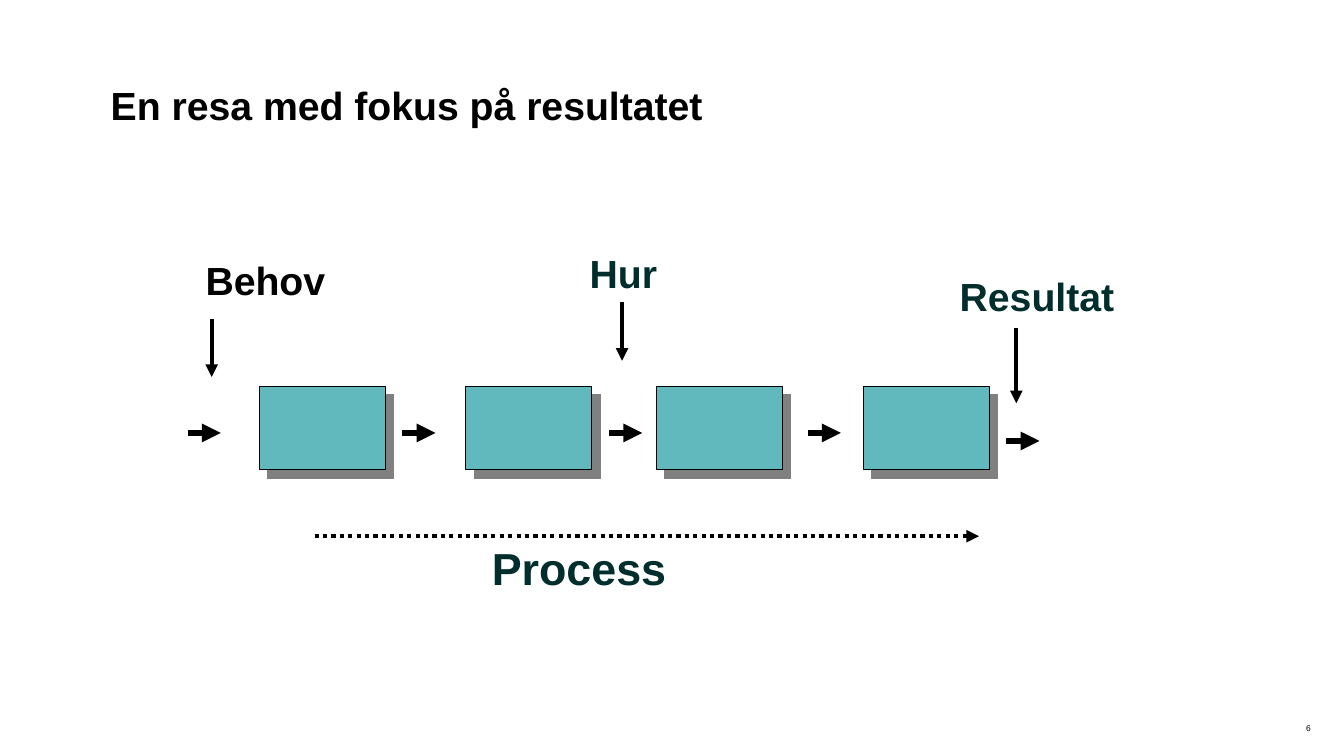
from lxml.etree import SubElement
from pptx import Presentation
from pptx.dml.color import RGBColor
from pptx.enum.dml import MSO_LINE
from pptx.enum.shapes import MSO_CONNECTOR, MSO_SHAPE
from pptx.enum.text import MSO_ANCHOR, PP_ALIGN
from pptx.oxml.ns import qn
from pptx.util import Inches, Pt

BLACK = "000000"
DARK_TEAL = "002E2D"
TEAL = "61B9BD"
SHADOW_GRAY = "808080"


def color(value):
    return RGBColor.from_string(value)


def add_text(slide, text, box, size, text_color=BLACK, bold=True, wrap=False,
             align=PP_ALIGN.LEFT, inset=None):
    shape = slide.shapes.add_textbox(*map(Inches, box))
    frame = shape.text_frame
    frame.word_wrap = wrap
    frame.vertical_anchor = MSO_ANCHOR.TOP
    if inset is not None:
        frame.margin_left = frame.margin_right = Inches(inset)
        frame.margin_top = frame.margin_bottom = Inches(inset)
    paragraph = frame.paragraphs[0]
    paragraph.text = text
    paragraph.alignment = align
    paragraph.font.name = "Arial"
    paragraph.font.size = Pt(size)
    paragraph.font.bold = bold
    paragraph.font.color.rgb = color(text_color)


def add_arrow(slide, left, top, width, height, weight, dash=None):
    arrow = slide.shapes.add_connector(
        MSO_CONNECTOR.STRAIGHT, Inches(left), Inches(top),
        Inches(left + width), Inches(top + height))
    arrow.line.color.rgb = color(BLACK)
    arrow.line.width = Pt(weight)
    if dash is not None:
        arrow.line.dash_style = dash
    properties = arrow._element.spPr
    SubElement(properties.find(qn("a:ln")), qn("a:tailEnd"), type="triangle")
    SubElement(properties, qn("a:effectLst"))


def add_step(slide, left, top, width, height):
    step = slide.shapes.add_shape(
        MSO_SHAPE.RECTANGLE, *map(Inches, (left, top, width, height)))
    step.fill.solid()
    step.fill.fore_color.rgb = color(TEAL)
    step.line.color.rgb = color(BLACK)
    step.line.width = Pt(0.75)
    step.shadow.inherit = False
    effects = step._element.spPr.find(qn("a:effectLst"))
    shadow = SubElement(effects, qn("a:outerShdw"), dist=str(Pt(8.5)),
                        dir="2700000", algn="ctr", rotWithShape="0")
    SubElement(shadow, qn("a:srgbClr"), val=SHADOW_GRAY)


def add_process_chain(slide, left, top, width, height):
    step_width, arrow_length = 1.25, 0.33
    middle = top + height / 2 + 0.05
    for offset in (0.71, 2.76, 4.65, 6.7):
        add_step(slide, left + offset, top, step_width, height)
    for offset in (0, 2.13, 4.18, 6.15):
        add_arrow(slide, left + offset, middle, arrow_length, 0, 4.5)
    add_arrow(slide, left + width - arrow_length, middle + 0.08, arrow_length, 0, 4.5)


def add_callout(slide, text, box, text_color, arrow_left, arrow_top, arrow_length):
    add_text(slide, text, box, 28, text_color)
    add_arrow(slide, arrow_left, arrow_top, 0, arrow_length, 3)


def add_process_caption(slide, left, top, width):
    add_arrow(slide, left, top, width, 0, 3, MSO_LINE.ROUND_DOT)
    add_text(slide, "Process", (left + 1.66, top, 1.93, 0.63), 32, DARK_TEAL)


def main():
    presentation = Presentation()
    presentation.slide_width = Inches(13.33)
    presentation.slide_height = Inches(7.5)
    slide = presentation.slides.add_slide(presentation.slide_layouts[6])
    add_text(slide, "En resa med fokus på resultatet", (1, 0.76, 12, 1.25), 28, wrap=True)
    add_process_chain(slide, 1.86, 3.83, 8.45, 0.83)
    add_callout(slide, "Behov", (1.94, 2.49, 1.4, 0.57), BLACK, 2.1, 3.16, 0.58)
    add_callout(slide, "Hur", (5.75, 2.42, 0.87, 0.57), DARK_TEAL, 6.17, 3, 0.58)
    add_callout(slide, "Resultat", (9.42, 2.65, 1.74, 0.57), DARK_TEAL, 10.08, 3.25, 0.75)
    add_process_caption(slide, 3.12, 5.32, 6.59)
    add_text(slide, "6", (12.33, 7.17, 0.67, 0.1), 6, bold=False, wrap=True,
             align=PP_ALIGN.RIGHT, inset=0)
    presentation.save("out.pptx")


if __name__ == "__main__":
    main()
